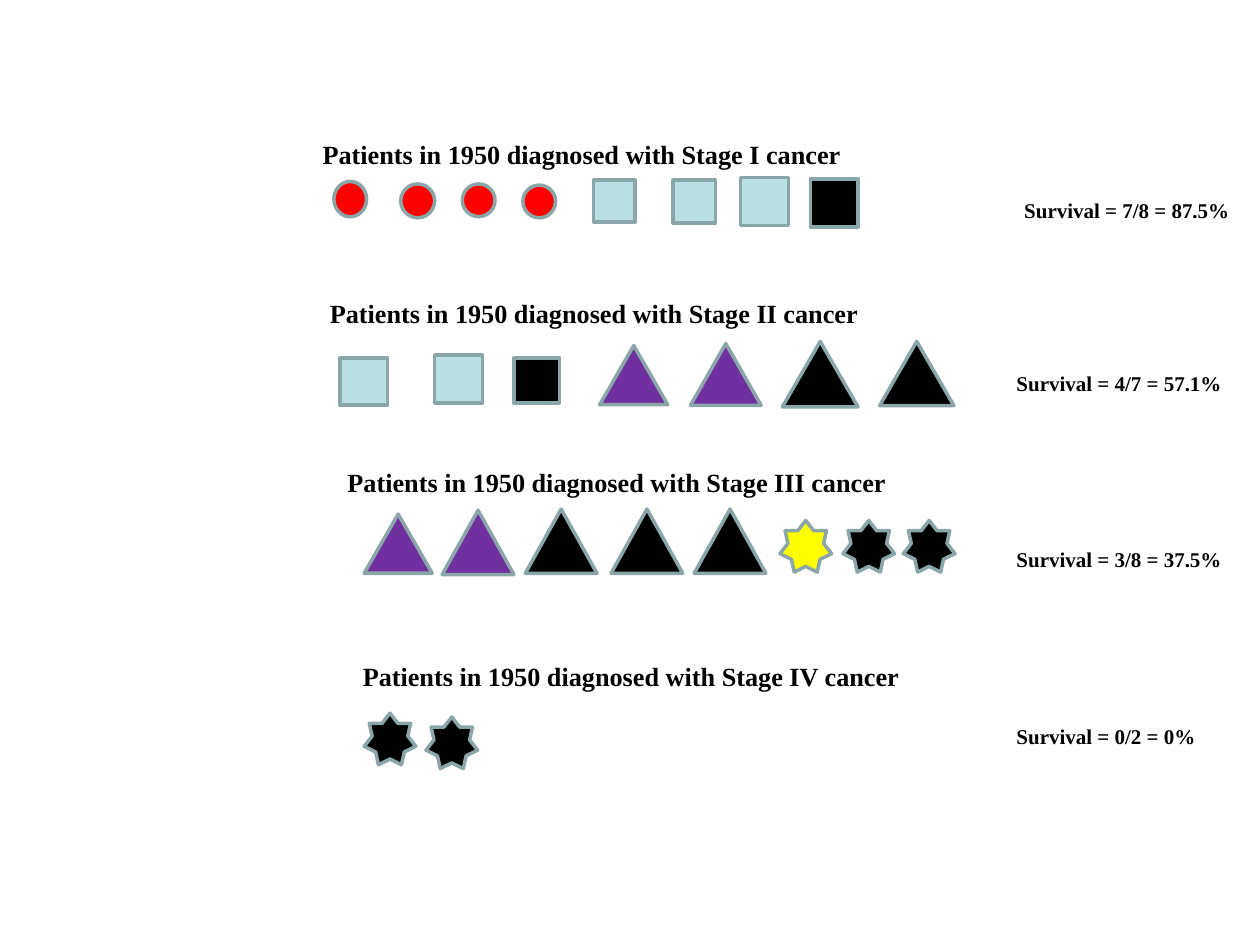
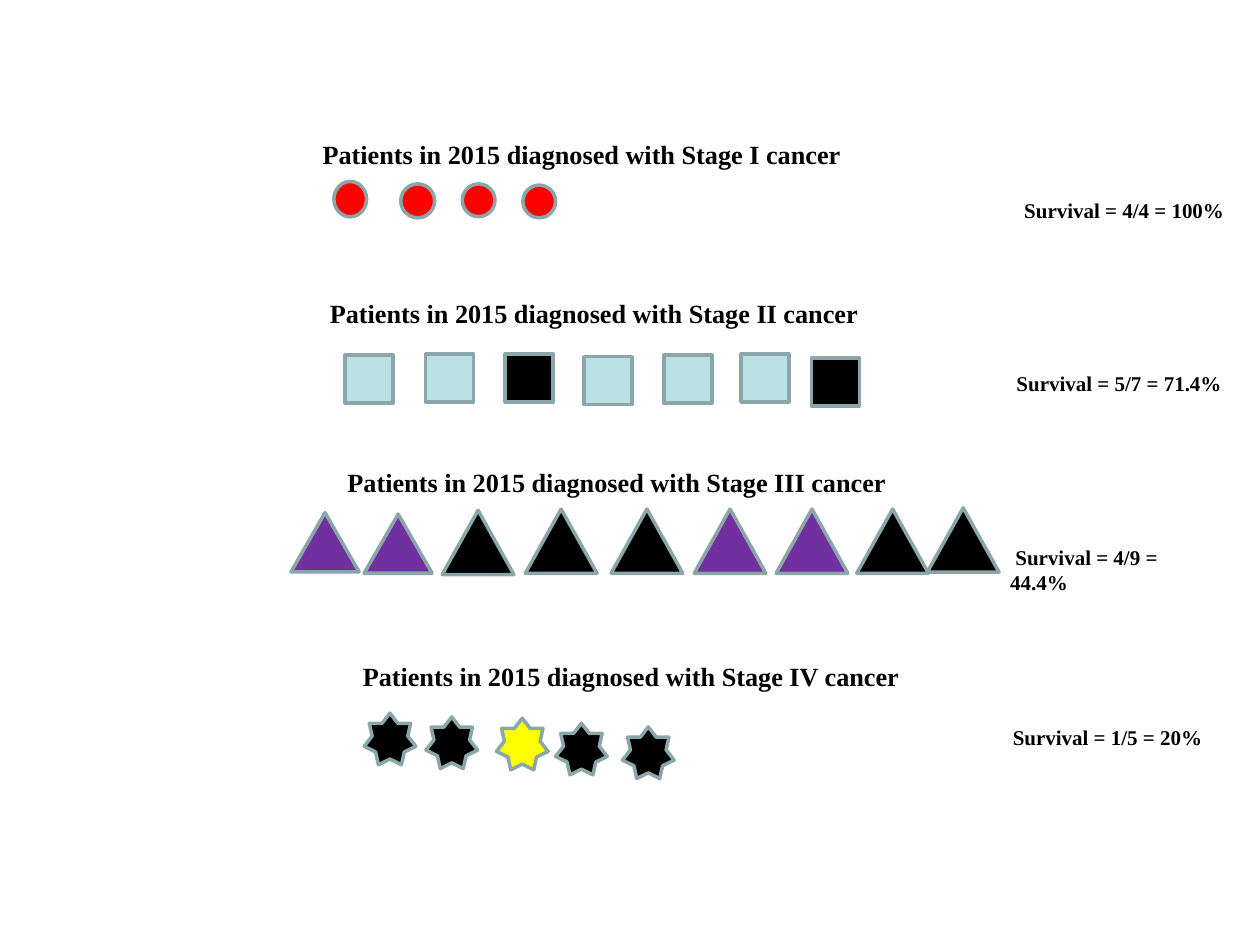
from pptx import Presentation
from pptx.dml.color import RGBColor
from pptx.enum import shapes, text
from pptx.util import Pt

BLACK = RGBColor(0x00, 0x00, 0x00)
RED = RGBColor(0xFF, 0x00, 0x00)
PALE_BLUE = RGBColor(0xBB, 0xE0, 0xE3)
PURPLE = RGBColor(0x70, 0x30, 0xA0)
YELLOW = RGBColor(0xFF, 0xFF, 0x00)
OUTLINE = RGBColor(0x8A, 0xA6, 0xA8)
FONT = "Times New Roman"

DOT = shapes.MSO_SHAPE.FLOWCHART_CONNECTOR
CIRCLE = shapes.MSO_SHAPE.OVAL
SQUARE = shapes.MSO_SHAPE.RECTANGLE
TRIANGLE = shapes.MSO_SHAPE.ISOSCELES_TRIANGLE
STAR = shapes.MSO_SHAPE.STAR_7_POINT

# Survivors take the colour of their symbol; deaths are black
SURVIVOR_COLORS = {DOT: RED, CIRCLE: RED, SQUARE: PALE_BLUE, TRIANGLE: PURPLE, STAR: YELLOW}

# Stage, left, top and width of its heading
HEADINGS = [
    ("I", 177.3, 75.6, 330),
    ("II", 181.4, 166.3, 320),
    ("III", 191.5, 262.8, 452),
    ("IV", 200.2, 373.7, 325),
]

# Symbol, left, top, width, height
CIRCLES = [
    (DOT, 190.8, 103.7, 18.7, 20.2),
    (CIRCLE, 229, 105.1, 19.4, 19.4),
    (DOT, 264.2, 105.1, 18.7, 18.7),
    (CIRCLE, 298.8, 105.8, 18.7, 18.7),
]
TRIANGLES = [
    (TRIANGLE, 208.1, 293.8, 38.9, 33.8),
    (TRIANGLE, 252.7, 291.6, 41, 36.7),
    (TRIANGLE, 300.2, 290.9, 41, 36.7),
    (TRIANGLE, 349.2, 290.9, 41, 36.7),
    (TRIANGLE, 396.7, 290.9, 41, 36.7),
]
STARS = [
    (STAR, 208.1, 407.5, 29.5, 29.5),
    (STAR, 243.4, 409.7, 29.5, 29.5),
]

# For each year, one row per stage: survival label, its left and top,
# the patients, and the positions of those who died
YEARS = {
    1950: [
        ("Survival = 7/8 = 87.5%", 578.2, 109.3, CIRCLES + [
            (SQUARE, 339.1, 103, 23.8, 23.8),
            (SQUARE, 384.5, 103, 24.5, 24.5),
            (SQUARE, 423.1, 101.5, 27.4, 27.4),
            (SQUARE, 463, 102.2, 27.4, 27.4),
        ], {7}),
        ("Survival = 4/7 = 57.1%", 573.8, 208.1, [
            (SQUARE, 194.4, 204.5, 27, 27),
            (SQUARE, 248.4, 203, 27.4, 27.4),
            (SQUARE, 293.8, 204.5, 25.9, 25.9),
            (TRIANGLE, 342.7, 197.5, 38.9, 33.8),
            (TRIANGLE, 394.6, 196.3, 40.3, 35.3),
            (TRIANGLE, 447.1, 195.1, 43.2, 37.4),
            (TRIANGLE, 502.6, 195.1, 42.5, 36.7),
        ], {2, 5, 6}),
        ("Survival = 3/8 = 37.5%", 573.8, 308.9, TRIANGLES + [
            (STAR, left, 297.4, 29.5, 29.5) for left in (445.7, 481.7, 516.2)
        ], {2, 3, 4, 6, 7}),
        ("Survival = 0/2 = 0%", 573.8, 409.7, STARS, {0, 1}),
    ],
    2015: [
        ("Survival = 4/4 = 100%", 578.2, 109.3, CIRCLES, set()),
        ("Survival = 5/7 = 71.4%", 573.8, 208.1, [
            (SQUARE, left, top, 27.4, 27.4) for left, top in (
                (197.1, 203), (243.2, 202.3), (288.7, 202.3), (333.7, 203.8),
                (379.4, 203), (423.4, 202.3), (463.7, 204.5))
        ], {2, 6}),
        (" Survival = 4/9 = 44.4%", 570.2, 307.4, [
            (TRIANGLE, 166.3, 293, 38.9, 33.8),
            *TRIANGLES,
            (TRIANGLE, 443.5, 290.9, 41, 36.7),
            (TRIANGLE, 489.6, 290.9, 41, 36.7),
            (TRIANGLE, 529.9, 290.2, 41, 36.7),
        ], {2, 3, 4, 7, 8}),
        ("Survival = 1/5 = 20%", 571.7, 410.4, STARS + [
            (STAR, 283.7, 410.4, 29.5, 29.5),
            (STAR, 317.5, 413.3, 29.5, 29.5),
            (STAR, 355.7, 415.4, 29.5, 29.5),
        ], {0, 1, 3, 4}),
    ],
}


def add_label(slide, wording, left, top, width, size):
    box = slide.shapes.add_textbox(Pt(left), Pt(top), Pt(width), Pt(25))
    frame = box.text_frame
    frame.word_wrap = True
    frame.vertical_anchor = text.MSO_ANCHOR.TOP
    paragraph = frame.paragraphs[0]
    paragraph.text = wording
    paragraph.font.name = FONT
    paragraph.font.size = Pt(size)
    paragraph.font.bold = True
    paragraph.font.color.rgb = BLACK


def add_patient(slide, symbol, left, top, width, height, died):
    shape = slide.shapes.add_shape(symbol, Pt(left), Pt(top), Pt(width), Pt(height))
    shape.shadow.inherit = False
    shape.fill.solid()
    shape.fill.fore_color.rgb = BLACK if died else SURVIVOR_COLORS[symbol]
    shape.line.color.rgb = OUTLINE
    shape.line.width = Pt(2)


presentation = Presentation()
presentation.slide_width = Pt(720)
presentation.slide_height = Pt(540)

for year, rows in YEARS.items():
    slide = presentation.slides.add_slide(presentation.slide_layouts[6])
    for (stage, left, top, width), row in zip(HEADINGS, rows):
        add_label(slide, f"Patients in {year} diagnosed with Stage {stage} cancer",
                  left, top, width, 15)
        survival, survival_left, survival_top, patients, deaths = row
        for index, patient in enumerate(patients):
            add_patient(slide, *patient, died=index in deaths)
        add_label(slide, survival, survival_left, survival_top, 133, 12)

presentation.save("out.pptx")
